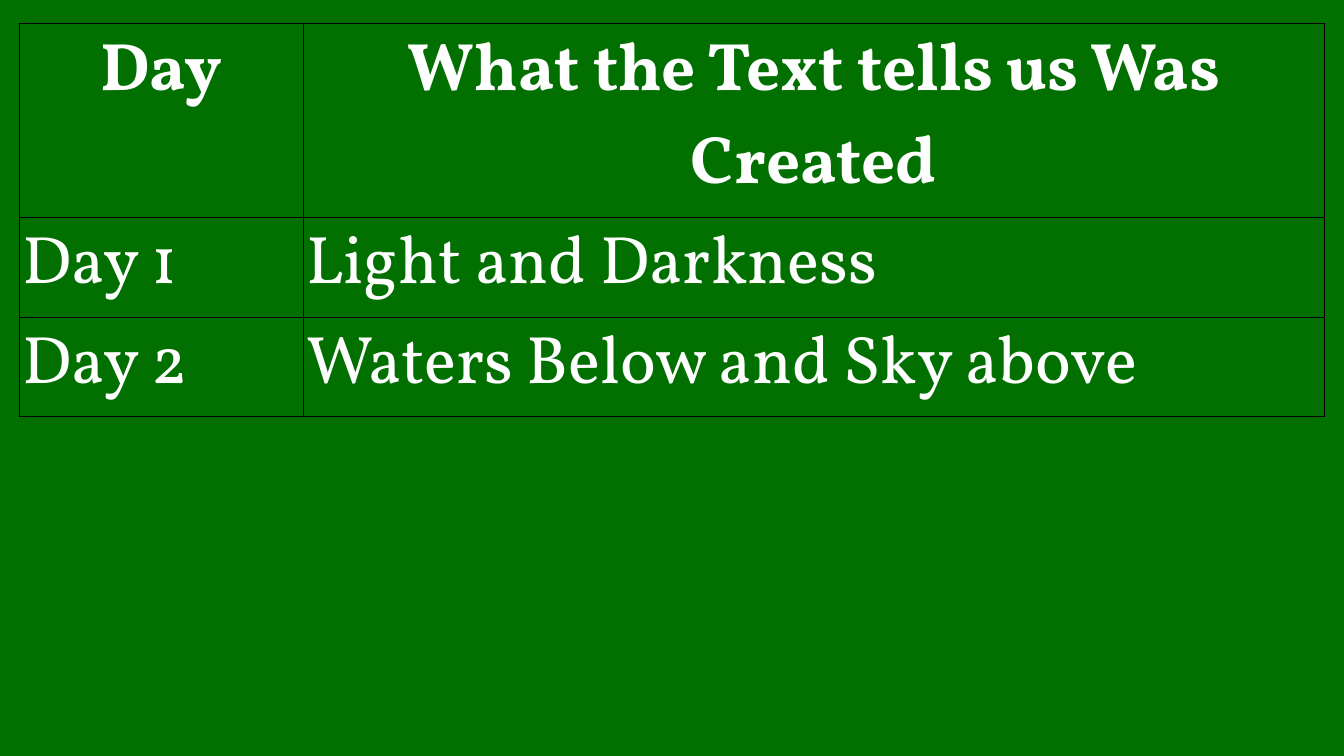
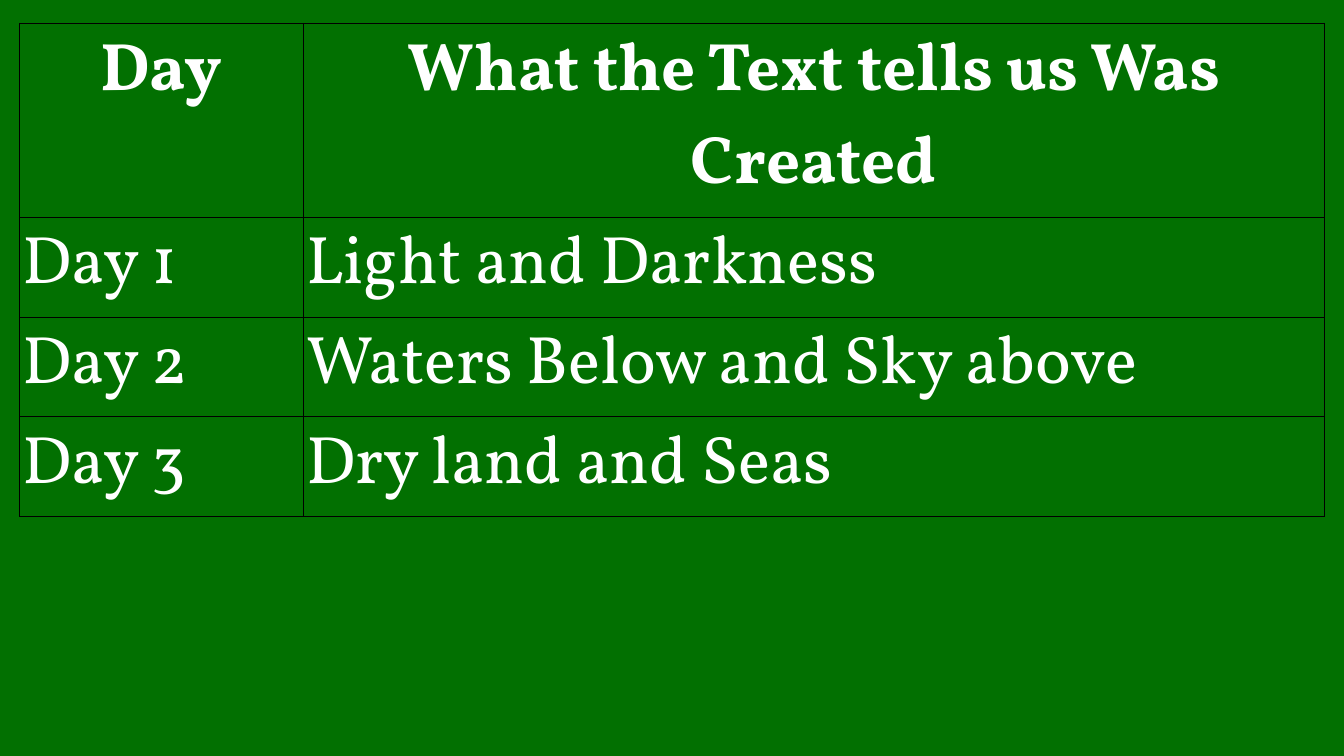
"""Build two slides that list, day by day, what was created."""
from lxml.etree import SubElement
from pptx import Presentation
from pptx.dml.color import RGBColor
from pptx.enum.text import PP_ALIGN
from pptx.oxml.ns import qn
from pptx.util import Pt

HEAD = ("Day", "What the Text tells us Was Created")
DAYS = [
    ("Day 1", "Light and Darkness"),
    ("Day 2", "Waters Below and Sky above"),
    ("Day 3", "Dry land and Seas"),
]
SHOWN = (2, 3)

HEX = {"green": "027001", "text": "FFFFFF", "rule": "000000"}
FONT, SIZE = "Vollkorn", 96
WIDE, HIGH = 1920, 1080
LEFT, TOP = 28, 33
COLS = (404.8, 1459.5)
ROW, PAD, RULE = 133, 4.5, 0.35


def paint(fill, name):
    fill.solid()
    fill.fore_color.rgb = RGBColor.from_string(HEX[name])


def frame(cell):
    props = cell._tc.get_or_add_tcPr()
    for spot, side in enumerate(("lnL", "lnR", "lnT", "lnB")):
        line = SubElement(props, qn(f"a:{side}"), w=str(int(Pt(RULE))))
        fill = SubElement(line, qn("a:solidFill"))
        SubElement(fill, qn("a:srgbClr"), val=HEX["rule"])
        props.insert(spot, line)


def write(cell, text, head):
    cell.text = text
    cell.margin_left = cell.margin_right = Pt(PAD)
    cell.margin_top = cell.margin_bottom = Pt(PAD)
    paint(cell.fill, "green")
    frame(cell)
    para = cell.text_frame.paragraphs[0]
    para.alignment = PP_ALIGN.CENTER if head else PP_ALIGN.LEFT
    font = para.font
    font.name, font.size, font.bold = FONT, Pt(SIZE), head
    font.color.rgb = RGBColor.from_string(HEX["text"])


def add_days(deck, count):
    slide = deck.slides.add_slide(deck.slide_layouts[6])
    rows = [HEAD, *DAYS[:count]]
    table = slide.shapes.add_table(
        len(rows), len(COLS), Pt(LEFT), Pt(TOP), Pt(sum(COLS)), Pt(ROW * len(rows))
    ).table
    table.horz_banding = False
    for col, width in zip(table.columns, COLS):
        col.width = Pt(width)
    for r, row in enumerate(rows):
        for c, text in enumerate(row):
            write(table.cell(r, c), text, r == 0)


def main():
    deck = Presentation()
    deck.slide_width, deck.slide_height = Pt(WIDE), Pt(HIGH)
    paint(deck.slide_master.background.fill, "green")
    for count in SHOWN:
        add_days(deck, count)
    deck.save("out.pptx")


if __name__ == "__main__":
    main()
